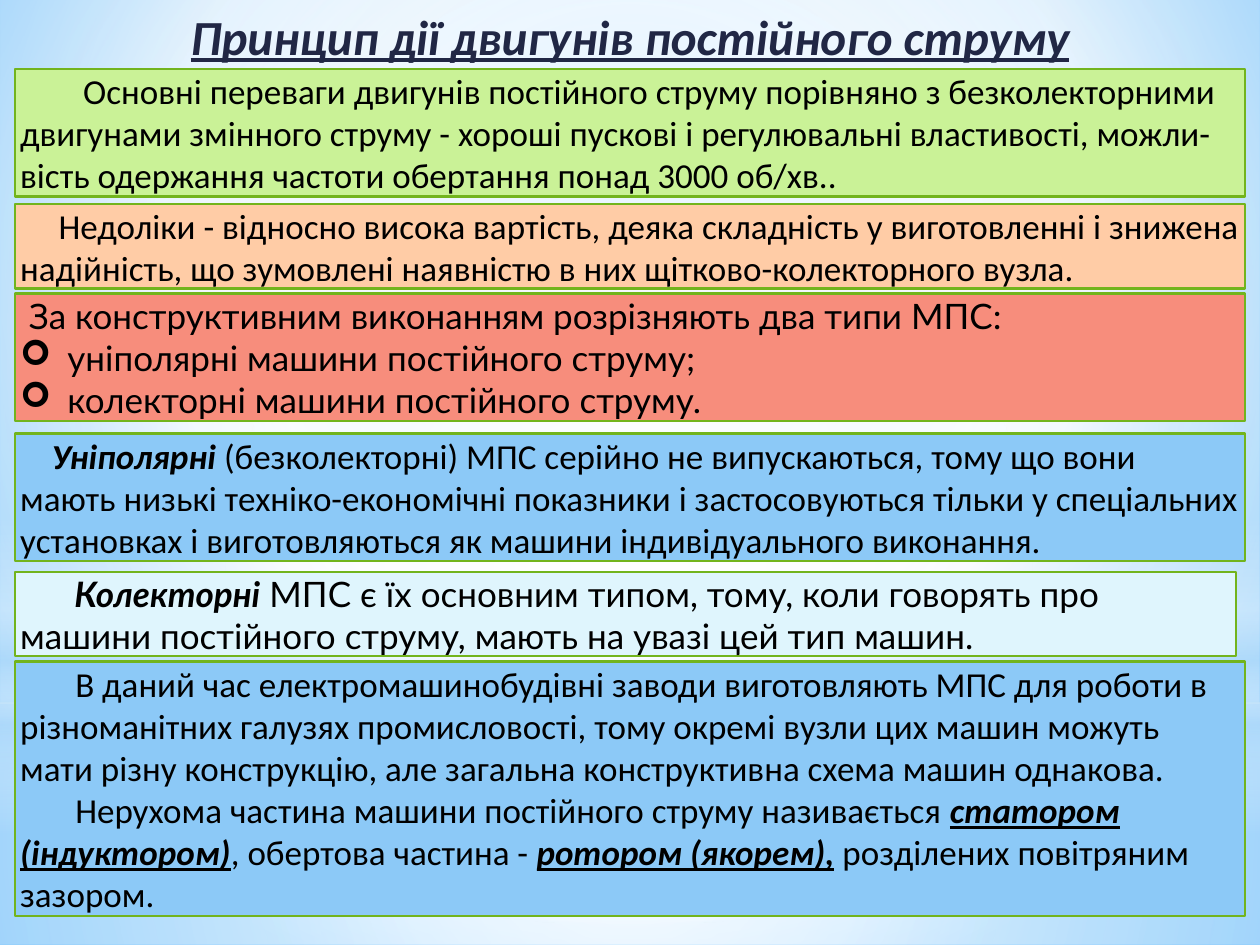
"""Build a slide on the working principle of direct-current motors."""
from lxml import etree
from pptx import Presentation
from pptx.dml.color import RGBColor
from pptx.enum.shapes import MSO_SHAPE
from pptx.enum.text import MSO_ANCHOR, MSO_AUTO_SIZE, PP_ALIGN
from pptx.oxml.ns import qn
from pptx.util import Pt

RECT, OVAL = MSO_SHAPE.RECTANGLE, MSO_SHAPE.OVAL
MIDDLE, TOP = MSO_ANCHOR.MIDDLE, MSO_ANCHOR.TOP
GROW = MSO_AUTO_SIZE.SHAPE_TO_FIT_TEXT
LEFT, CENTER = PP_ALIGN.LEFT, PP_ALIGN.CENTER

THEME = {
    "title": "212745", "text": "000000", "border": "72B41D",
    "green": "CAF297", "peach": "FFCCA6", "red": "F78D7C",
    "blue": "8CC9F7", "ice": "DFF5FD",
    "white": "FFFFFF", "haze": "B4DCFA", "sky": "9ED5FF", "deep": "5BB9FF",
    "title_size": 28, "body_size": 20, "body_font": "Calibri", "alt_font": "Lato",
}
STYLES = {
    "plain": {},
    "term": {"bold": True, "italic": True},
    "key": {"bold": True, "italic": True, "underline": True},
}


def paint_gradient(fill, owner, stops, focus=None):
    """Replace a solid fill by a gradient, radial if a focus is given."""
    fill.solid()
    solid = next(owner.iter(qn("a:solidFill")))
    gradient = etree.Element(qn("a:gradFill"), rotWithShape="1")
    stop_list = etree.SubElement(gradient, qn("a:gsLst"))
    for position, color, opacity in stops:
        stop = etree.SubElement(stop_list, qn("a:gs"), pos=str(position * 1000))
        rgb = etree.SubElement(stop, qn("a:srgbClr"), val=THEME[color])
        if opacity < 100:
            etree.SubElement(rgb, qn("a:alpha"), val=str(opacity * 1000))
    if focus:
        path = etree.SubElement(gradient, qn("a:path"), path="circle")
        sides = {side: str(value * 1000) for side, value in zip("ltrb", focus)}
        etree.SubElement(path, qn("a:fillToRect"), sides)
    else:
        etree.SubElement(gradient, qn("a:lin"), ang="5400000", scaled="0")
    solid.getparent().replace(solid, gradient)


def write_paragraph(paragraph, runs, font, size, color):
    """Add runs of (text, style) to a paragraph."""
    for text, style in runs:
        run = paragraph.add_run()
        run.text = text
        run.font.color.rgb = RGBColor.from_string(THEME[color])
        look = {"name": THEME[font], "size": Pt(THEME[size]), **STYLES[style]}
        for attribute, value in look.items():
            setattr(run.font, attribute, value)


deck = Presentation()
deck.slide_width, deck.slide_height = Pt(720), Pt(540)
slide = deck.slides.add_slide(deck.slide_layouts[6])

background = slide.background.fill
paint_gradient(background, slide.element,
               [(0, "sky", 100), (60, "white", 100), (100, "deep", 100)],
               (20, 10, 20, 60))

CENTRE = (50, 50, 50, 50)
GLOWS = [
    (RECT, 401.76, 138.24, CENTRE,
     [(0, "white", 91), (37, "white", 76), (100, "haze", 79)]),
    (RECT, 0, 401.76, CENTRE,
     [(0, "white", 89), (48, "white", 62), (100, "haze", 79)]),
    (RECT, 296.64, 180, None,
     [(0, "white", 0), (29, "white", 30), (45, "haze", 40),
      (55, "white", 26), (65, "haze", 60), (100, "white", 0)]),
    (OVAL, 126, 401.76, CENTRE, [(0, "white", 100), (56, "white", 0)]),
]
for outline, top, height, focus, stops in GLOWS:
    glow = slide.shapes.add_shape(outline, 0, Pt(top), Pt(720), Pt(height))
    glow.shadow.inherit = False
    glow.line.fill.background()
    paint_gradient(glow.fill, glow.element.spPr, stops, focus)

title = slide.shapes.add_textbox(Pt(8.64), 0, Pt(702.72), Pt(41.04))
title_frame = title.text_frame
title_format = {"word_wrap": True, "auto_size": GROW, "vertical_anchor": TOP,
                "margin_left": 0, "margin_right": 0}
for attribute, value in title_format.items():
    setattr(title_frame, attribute, value)
title_frame.paragraphs[0].alignment = CENTER
write_paragraph(title_frame.paragraphs[0],
                [("Принцип дії двигунів постійного струму", "key")],
                "body_font", "title_size", "title")

PANELS = [
    (39.6, 702.72, 72.72, "green", "body_font", [
        (36, None, [("Основні переваги двигунів постійного струму порівняно з безколекторними двигунами змінного струму - хороші пускові і регулювальні властивості, можли-вість одержання частоти обертання понад 3000 об/хв..", "plain")])]),
    (116.64, 702.72, 48.24, "peach", "body_font", [
        (22, None, [("Недоліки - відносно висока вартість, деяка складність у виготовленні і знижена надійність, що зумовлені наявністю в них щітково-колекторного вузла.", "plain")])]),
    (167.76, 702.72, 72.72, "red", "alt_font", [
        (5, None, [("За конструктивним виконанням розрізняють два типи МПС:", "plain")]),
        (-27, "➢", [("уніполярні машини постійного струму;", "plain")]),
        (-27, "➢", [("колекторні машини постійного струму.", "plain")])]),
    (247.68, 702.72, 72.72, "blue", "body_font", [
        (18, None, [
            ("Уніполярні", "term"),
            (" (безколекторні) МПС серійно не випускаються, тому що вони мають низькі техніко-економічні показники і застосовуються тільки у спеціальних установках і виготовляються як машини індивідуального виконання.", "plain")])]),
    (326.88, 697.68, 48.24, "ice", "alt_font", [
        (31, None, [
            ("Колекторні", "term"),
            (" МПС є їх основним типом, тому, коли говорять про машини постійного струму, мають на увазі цей тип машин.", "plain")])]),
    (378, 702.72, 145.44, "blue", "body_font", [
        (31.5, None, [("В даний час електромашинобудівні заводи виготовляють МПС для роботи в різноманітних галузях промисловості, тому окремі вузли цих машин можуть мати різну конструкцію, але загальна конструктивна схема машин однакова.", "plain")]),
        (31.5, None, [
            ("Нерухома частина машини постійного струму називається ", "plain"),
            ("статором (індуктором)", "key"),
            (", обертова частина - ", "plain"),
            ("ротором (якорем),", "key"),
            (" розділених повітряним зазором.", "plain")])]),
]
PANEL_FORMAT = {"word_wrap": True, "auto_size": GROW, "vertical_anchor": MIDDLE,
                "margin_left": Pt(2.88), "margin_right": Pt(2.88),
                "margin_top": 0, "margin_bottom": 0}
for top, width, height, color, font, paragraphs in PANELS:
    panel = slide.shapes.add_shape(RECT, Pt(8.64), Pt(top), Pt(width), Pt(height))
    panel.shadow.inherit = False
    panel.fill.solid()
    panel.fill.fore_color.rgb = RGBColor.from_string(THEME[color])
    panel.line.color.rgb = RGBColor.from_string(THEME["border"])
    panel.line.width = Pt(1.25)
    frame = panel.text_frame
    for attribute, value in PANEL_FORMAT.items():
        setattr(frame, attribute, value)
    for index, (indent, bullet, runs) in enumerate(paragraphs):
        paragraph = frame.add_paragraph() if index else frame.paragraphs[0]
        paragraph.alignment = LEFT
        properties = paragraph._p.get_or_add_pPr()
        properties.set("marL", str(Pt(max(-indent, 0))))
        properties.set("indent", str(Pt(indent)))
        if bullet:
            etree.SubElement(properties, qn("a:buFont"), typeface="Wingdings")
            etree.SubElement(properties, qn("a:buChar"), char=bullet)
        write_paragraph(paragraph, runs, font, "body_size", "text")

deck.save("out.pptx")
